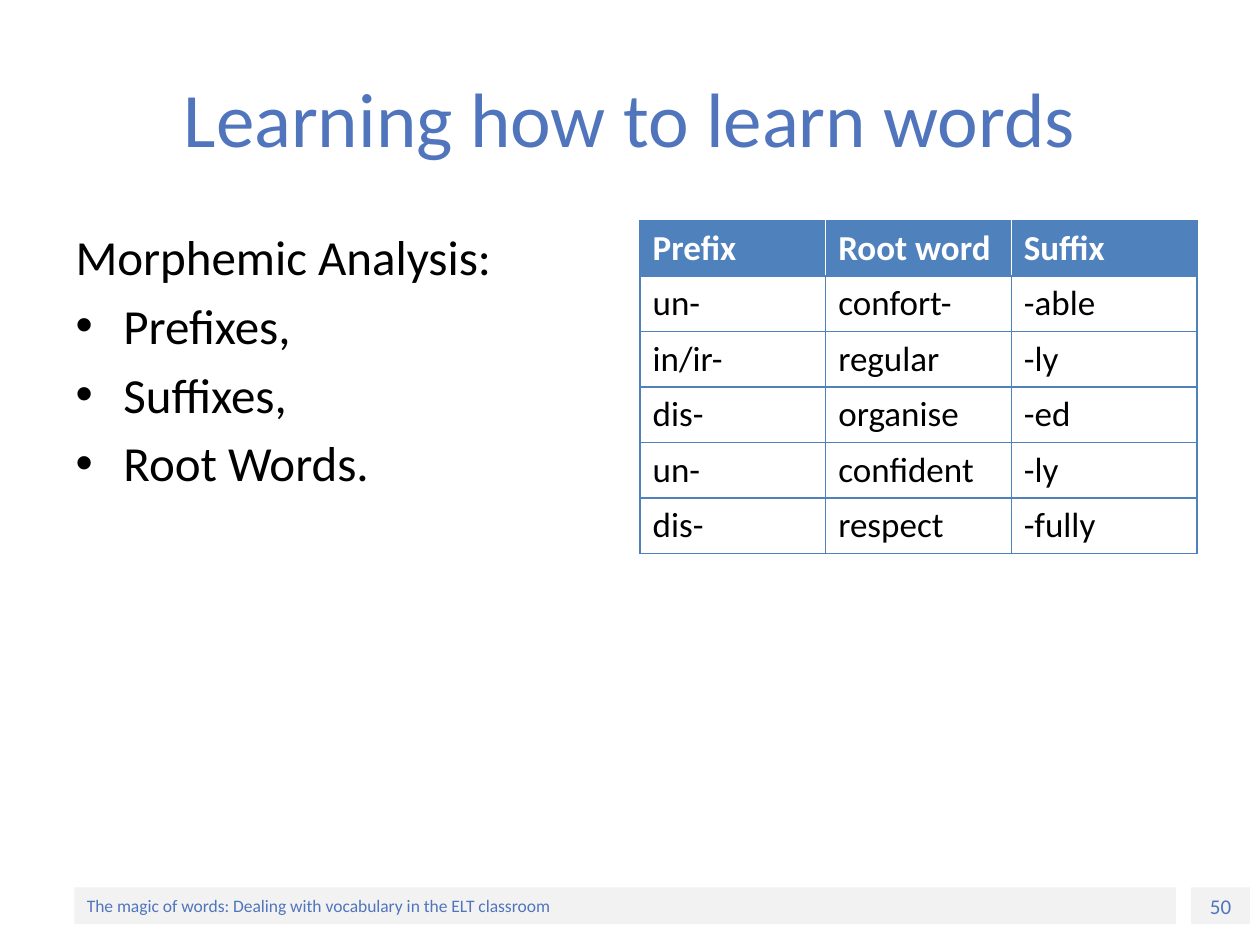
import pptx
import pptx.dml.color
import pptx.enum.shapes
import pptx.enum.text
import pptx.oxml
import pptx.oxml.ns
import pptx.util

TITLE_BLUE = pptx.dml.color.RGBColor(0x50, 0x75, 0xBC)
TABLE_BLUE = pptx.dml.color.RGBColor(0x4F, 0x81, 0xBD)
BAR_GREY = pptx.dml.color.RGBColor(0xF2, 0xF2, 0xF2)
WHITE = pptx.dml.color.RGBColor(0xFF, 0xFF, 0xFF)
BLACK = pptx.dml.color.RGBColor(0x00, 0x00, 0x00)

WIDTH = pptx.util.Inches(10)
HEIGHT = pptx.util.Inches(7.5)
MARGIN = 0.05 * WIDTH
GUTTER = 0.016 * WIDTH
COLUMN = (WIDTH - 2 * MARGIN - GUTTER) / 2
CONTENT_TOP = 1.75 / 7.5 * HEIGHT
INDENT = pptx.util.Inches(0.38)

MORPHEMES = [
    ("Prefix", "Root word", "Suffix"),
    ("un-", "confort-", "-able"),
    ("in/ir-", "regular", "-ly"),
    ("dis-", "organise", "-ed"),
    ("un-", "confident", "-ly"),
    ("dis-", "respect", "-fully"),
]


def style(paragraph, size, color, bold=False):
    paragraph.font.name = "Calibri"
    paragraph.font.size = pptx.util.Pt(size)
    paragraph.font.color.rgb = color
    paragraph.font.bold = bold


def place(placeholder, box):
    placeholder.left, placeholder.top, placeholder.width, placeholder.height = map(int, box)


def fill_title(title, box):
    place(title, box)
    title.text_frame.text = "Learning how to learn words"
    title.text_frame.vertical_anchor = pptx.enum.text.MSO_ANCHOR.MIDDLE
    heading = title.text_frame.paragraphs[0]
    heading.alignment = pptx.enum.text.PP_ALIGN.CENTER
    style(heading, 44, TITLE_BLUE)


def set_bullet(paragraph, char=None):
    properties = paragraph._p.get_or_add_pPr()
    indent = INDENT if char else 0
    properties.set("marL", str(indent))
    properties.set("indent", str(-indent))
    if char:
        bullet = pptx.oxml.parse_xml(f'<a:buChar {pptx.oxml.ns.nsdecls("a")} char="{char}"/>')
    else:
        bullet = pptx.oxml.parse_xml(f'<a:buNone {pptx.oxml.ns.nsdecls("a")}/>')
    properties.append(bullet)


def fill_analysis(body, box):
    place(body, box)
    body.text_frame.text = "Morphemic Analysis:\nPrefixes,\nSuffixes,\nRoot Words."
    lead, *parts = body.text_frame.paragraphs
    set_bullet(lead)
    lead.space_before = pptx.util.Pt(0)
    for part in parts:
        set_bullet(part, "•")
        part.space_before = pptx.util.Pt(5.6)
    for paragraph in (lead, *parts):
        style(paragraph, 28, BLACK)


def set_borders(cell, colors):
    properties = cell._tc.get_or_add_tcPr()
    for position, (side, color) in enumerate(colors.items()):
        properties.insert(position, pptx.oxml.parse_xml(
            f'<a:{side} {pptx.oxml.ns.nsdecls("a")} w="12700"><a:solidFill>'
            f'<a:srgbClr val="{color}"/></a:solidFill></a:{side}>'))


def add_morpheme_table(slide, box):
    rows, columns = len(MORPHEMES), len(MORPHEMES[0])
    table = slide.shapes.add_table(rows, columns, *map(int, box)).table
    for row, words in enumerate(MORPHEMES):
        header = row == 0
        divider = WHITE if header else TABLE_BLUE
        for column, word in enumerate(words):
            cell = table.cell(row, column)
            cell.text = word
            cell.fill.solid()
            cell.fill.fore_color.rgb = TABLE_BLUE if header else WHITE
            style(cell.text_frame.paragraphs[0], 20, WHITE if header else BLACK, header)
            set_borders(cell, {
                "lnL": divider if column else TABLE_BLUE,
                "lnR": divider if column < columns - 1 else TABLE_BLUE,
                "lnT": TABLE_BLUE,
                "lnB": TABLE_BLUE,
            })


def add_footer_bar(slide, box, text, size, alignment):
    bar = slide.shapes.add_shape(pptx.enum.shapes.MSO_SHAPE.RECTANGLE, *map(int, box))
    bar.shadow.inherit = False
    bar.fill.solid()
    bar.fill.fore_color.rgb = BAR_GREY
    bar.line.fill.background()
    bar.text_frame.word_wrap = True
    bar.text_frame.vertical_anchor = pptx.enum.text.MSO_ANCHOR.MIDDLE
    bar.text_frame.text = text
    paragraph = bar.text_frame.paragraphs[0]
    paragraph.alignment = alignment
    style(paragraph, size, TITLE_BLUE)


def add_footer(slide, box):
    left, top, width, height = box
    add_footer_bar(slide, (left, top, 0.937 * width, height),
                   "The magic of words: Dealing with vocabulary in the ELT classroom",
                   10, pptx.enum.text.PP_ALIGN.LEFT)
    add_footer_bar(slide, (left + 0.95 * width, top, 0.05 * width, height),
                   "50", 12, pptx.enum.text.PP_ALIGN.CENTER)


def main():
    presentation = pptx.Presentation()
    presentation.slide_width, presentation.slide_height = WIDTH, HEIGHT
    slide = presentation.slides.add_slide(presentation.slide_layouts[1])
    add_footer(slide, (0.059 * WIDTH, 0.939 * HEIGHT, 0.933 * WIDTH, 0.039 * HEIGHT))
    fill_title(slide.shapes.title, (MARGIN, 0.04 * HEIGHT, WIDTH - 2 * MARGIN, HEIGHT / 6))
    fill_analysis(slide.placeholders[1], (MARGIN, CONTENT_TOP, COLUMN, 0.66 * HEIGHT))
    add_morpheme_table(slide, (MARGIN + COLUMN + GUTTER, CONTENT_TOP, COLUMN, 0.352 * HEIGHT))
    presentation.save("out.pptx")


if __name__ == "__main__":
    main()
